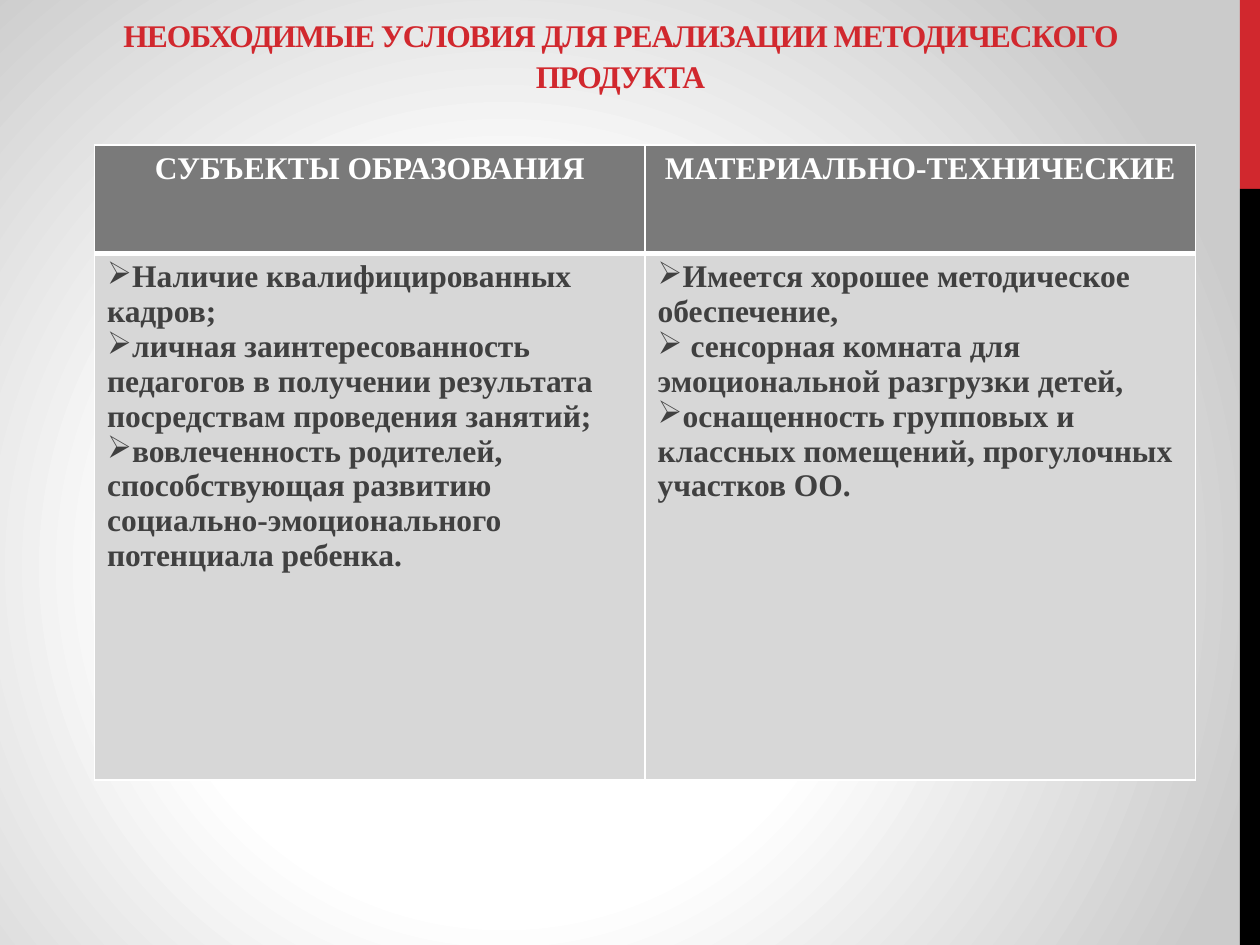
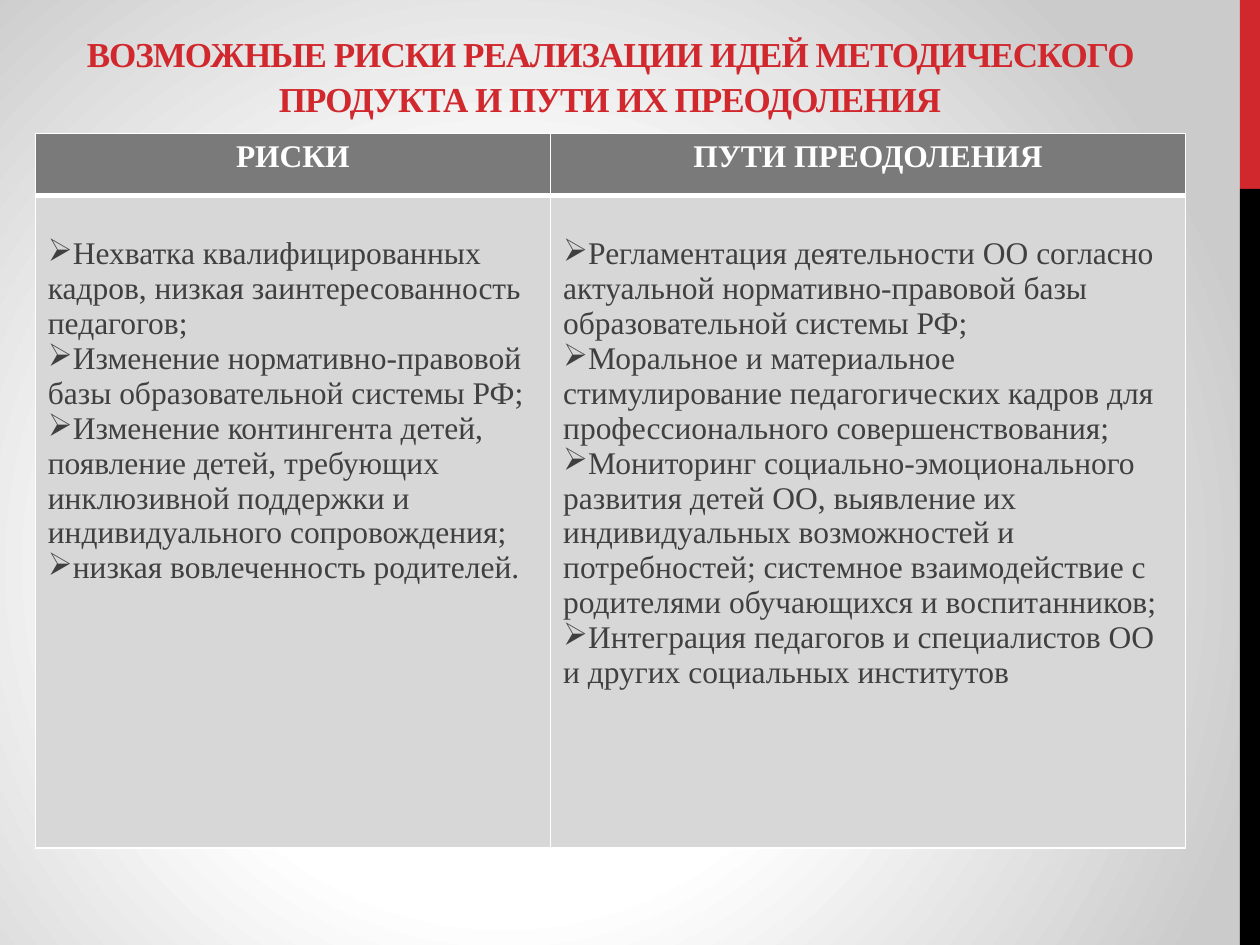
from dataclasses import dataclass
from lxml.etree import SubElement as Sub
from pptx import Presentation
from pptx.dml.color import RGBColor as Rgb
from pptx.enum.shapes import MSO_SHAPE as Kind
from pptx.enum.text import MSO_ANCHOR as Anchor, MSO_AUTO_SIZE as Fit, PP_ALIGN as Align
from pptx.oxml import parse_xml as to_xml
from pptx.oxml.ns import nsdecls, qn
from pptx.util import Inches, Pt


@dataclass(frozen=True)
class Theme:
    font: str = "Times New Roman"
    red: str = "D1282E"
    black: str = "000000"
    white: str = "FFFFFF"
    head: str = "7A7A7A"
    body: str = "D7D7D7"
    ink: str = "404040"
    edge: str = "CBCBCB"
    text: int = 18
    thin: int = 1
    thick: int = 3
    tight: int = -60
    lead: float = 1.08
    mark: str = "➢"


@dataclass(frozen=True)
class Box:
    col: float
    row: float
    wide: float
    high: float

    def place(self) -> tuple:
        return tuple(unit(n) for n in (self.col, self.row, self.wide, self.high))


@dataclass(frozen=True)
class Band:
    box: Box
    fill: str


@dataclass(frozen=True)
class Lane:
    head: str
    wide: float
    items: tuple


@dataclass(frozen=True)
class Page:
    title: str
    size: int
    top: Box
    grid: Box
    first: float
    bold: bool
    inset: float
    lanes: tuple


LOOK = Theme()
COLS, ROWS = 100, 75
STEP = Inches(10) // COLS
EDGE = 98.4
BANDS = (
    Band(Box(EDGE, 0, COLS - EDGE, ROWS / 5), LOOK.red),
    Band(Box(EDGE, ROWS / 5, COLS - EDGE, ROWS * 4 / 5), LOOK.black),
)

PAGES = (
    Page(
        "НЕОБХОДИМЫЕ УСЛОВИЯ ДЛЯ РЕАЛИЗАЦИИ МЕТОДИЧЕСКОГО ПРОДУКТА",
        18, Box(5.9, 1.3, 86.7, 6.7), Box(7.5, 11.5, 87.4, 50.4), 8.6, True, 0.5,
        (
            Lane("СУБЪЕКТЫ ОБРАЗОВАНИЯ", 43.7, (
                "Наличие квалифицированных кадров;",
                "личная заинтересованность педагогов в получении результата посредствам проведения занятий;",
                "вовлеченность родителей, способствующая развитию социально-эмоционального потенциала ребенка.",
            )),
            Lane("МАТЕРИАЛЬНО-ТЕХНИЧЕСКИЕ", 43.7, (
                "Имеется хорошее методическое обеспечение,",
                " сенсорная комната для эмоциональной разгрузки детей,",
                "оснащенность групповых и классных помещений, прогулочных участков ОО.",
            )),
        ),
    ),
    Page(
        "ВОЗМОЖНЫЕ РИСКИ РЕАЛИЗАЦИИ ИДЕЙ МЕТОДИЧЕСКОГО ПРОДУКТА И ПУТИ ИХ ПРЕОДОЛЕНИЯ",
        20, Box(3.5, 2.1, 89.8, 7.9), Box(2.8, 10.6, 91.3, 56.7), 4.9, False, 3.3,
        (
            Lane("РИСКИ", 40.9, (
                "Нехватка квалифицированных кадров, низкая заинтересованность педагогов;",
                "Изменение нормативно-правовой базы образовательной системы РФ;",
                "Изменение контингента детей, появление детей, требующих инклюзивной поддержки "
                "и индивидуального сопровождения;",
                "низкая вовлеченность родителей.",
            )),
            Lane("ПУТИ ПРЕОДОЛЕНИЯ", 50.4, (
                "Регламентация деятельности ОО согласно актуальной нормативно-правовой базы "
                "образовательной системы РФ;",
                "Моральное и материальное стимулирование педагогических кадров для "
                "профессионального совершенствования;",
                "Мониторинг социально-эмоционального развития детей ОО, выявление их "
                "индивидуальных возможностей и потребностей; системное взаимодействие с "
                "родителями обучающихся и воспитанников;",
                "Интеграция педагогов и специалистов ОО и других социальных институтов",
            )),
        ),
    ),
)


def unit(num: float) -> int:
    return round(num * STEP)


def style(para, size: int, color: str, bold: bool) -> None:
    font = para.font
    font.name, font.size, font.bold = LOOK.font, Pt(size), bold
    font.color.rgb = Rgb.from_string(color)


def add_back(layout) -> None:
    stops = ((0, LOOK.white), (44, LOOK.white), (100, LOOK.edge))
    marks = "".join(
        f'<a:gs pos="{pos * 1000}"><a:srgbClr val="{color}"/></a:gs>' for pos, color in stops
    )
    back = to_xml(
        f'<p:bg {nsdecls("p", "a")}><p:bgPr><a:gradFill rotWithShape="1">'
        f'<a:gsLst>{marks}</a:gsLst><a:path path="circle">'
        '<a:fillToRect l="40000" t="60000" r="60000" b="40000"/></a:path>'
        '</a:gradFill><a:effectLst/></p:bgPr></p:bg>'
    )
    layout.element.cSld.insert(0, back)


def add_band(slide, band: Band) -> None:
    shape = slide.shapes.add_shape(Kind.RECTANGLE, *band.box.place())
    shape.shadow.inherit = False
    shape.fill.solid()
    shape.fill.fore_color.rgb = Rgb.from_string(band.fill)
    shape.line.fill.background()


def add_title(slide, page: Page) -> None:
    title = slide.shapes.title
    title.left, title.top, title.width, title.height = page.top.place()
    frame = title.text_frame
    frame.text = page.title
    frame.word_wrap = True
    frame.auto_size = Fit.NONE
    frame.vertical_anchor = Anchor.BOTTOM
    para = frame.paragraphs[0]
    para.alignment = Align.CENTER
    para.line_spacing = LOOK.lead
    style(para, page.size, LOOK.red, True)
    para.font._element.set("spc", str(LOOK.tight))


def add_mark(para) -> None:
    props = para._p.get_or_add_pPr()
    props.set("marL", "0")
    props.set("indent", "0")
    Sub(props, qn("a:buChar")).set("char", LOOK.mark)


def paint(cell, fill: str, sides: dict) -> None:
    props = cell._tc.get_or_add_tcPr()
    for side, width in sides.items():
        line = Sub(props, qn(f"a:ln{side}"), w=str(Pt(width)))
        Sub(Sub(line, qn("a:solidFill")), qn("a:srgbClr")).set("val", LOOK.white)
    cell.fill.solid()
    cell.fill.fore_color.rgb = Rgb.from_string(fill)


def add_grid(slide, page: Page) -> None:
    table = slide.shapes.add_table(2, len(page.lanes), *page.grid.place()).table
    table.first_row = table.horz_banding = False
    table.rows[0].height = unit(page.first)
    table.rows[1].height = unit(page.grid.high - page.first)
    thin = dict.fromkeys("LRTB", LOOK.thin)
    for col, lane in enumerate(page.lanes):
        table.columns[col].width = unit(lane.wide)
        head, body = table.cell(0, col), table.cell(1, col)
        paint(head, LOOK.head, thin | {"B": LOOK.thick})
        paint(body, LOOK.body, thin | {"T": LOOK.thick})
        head.text = lane.head
        para = head.text_frame.paragraphs[0]
        para.alignment = Align.CENTER
        style(para, LOOK.text, LOOK.white, True)
        body.margin_top = unit(page.inset)
        body.text = "\n".join(lane.items)
        for para in body.text_frame.paragraphs:
            add_mark(para)
            style(para, LOOK.text, LOOK.ink, page.bold)


def main() -> None:
    deck = Presentation()
    deck.slide_width, deck.slide_height = unit(COLS), unit(ROWS)
    layout = deck.slide_layouts.get_by_name("Title Only")
    add_back(layout)
    for page in PAGES:
        slide = deck.slides.add_slide(layout)
        for band in BANDS:
            add_band(slide, band)
        add_title(slide, page)
        add_grid(slide, page)
    deck.save("out.pptx")


if __name__ == "__main__":
    main()
